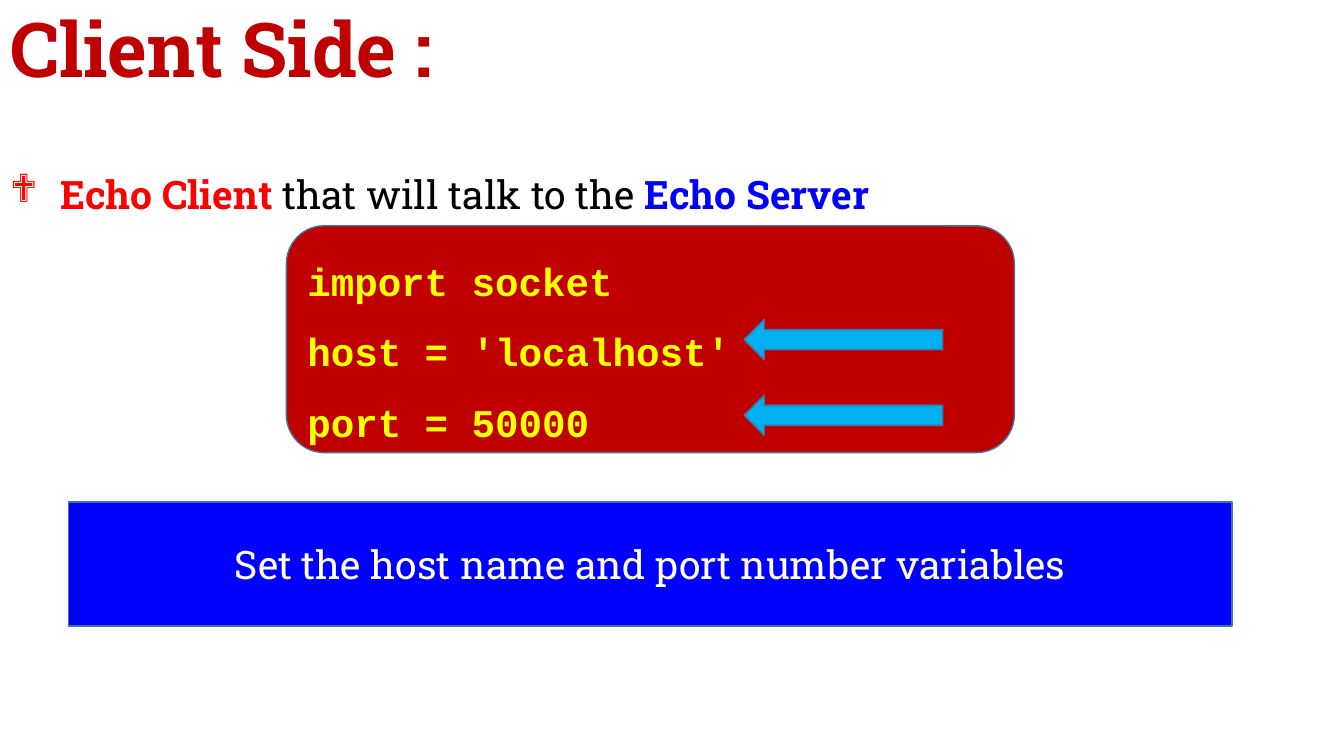
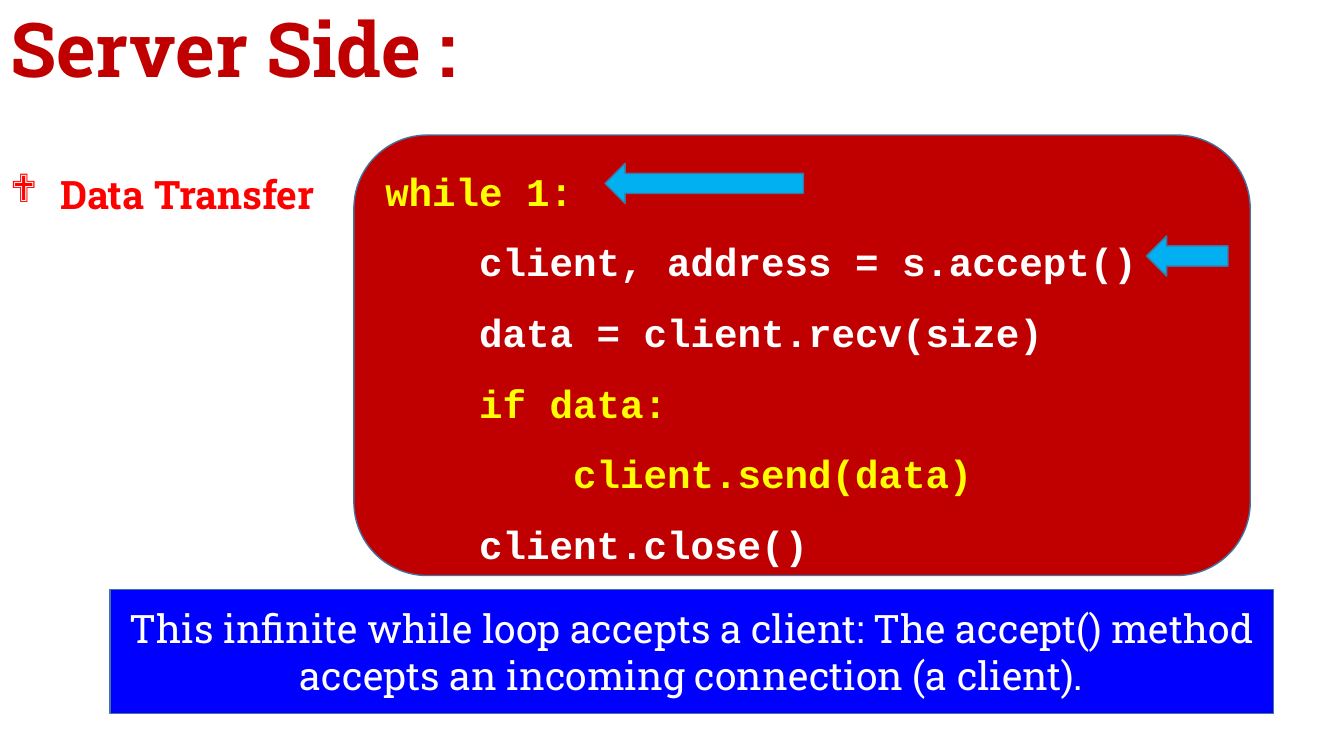
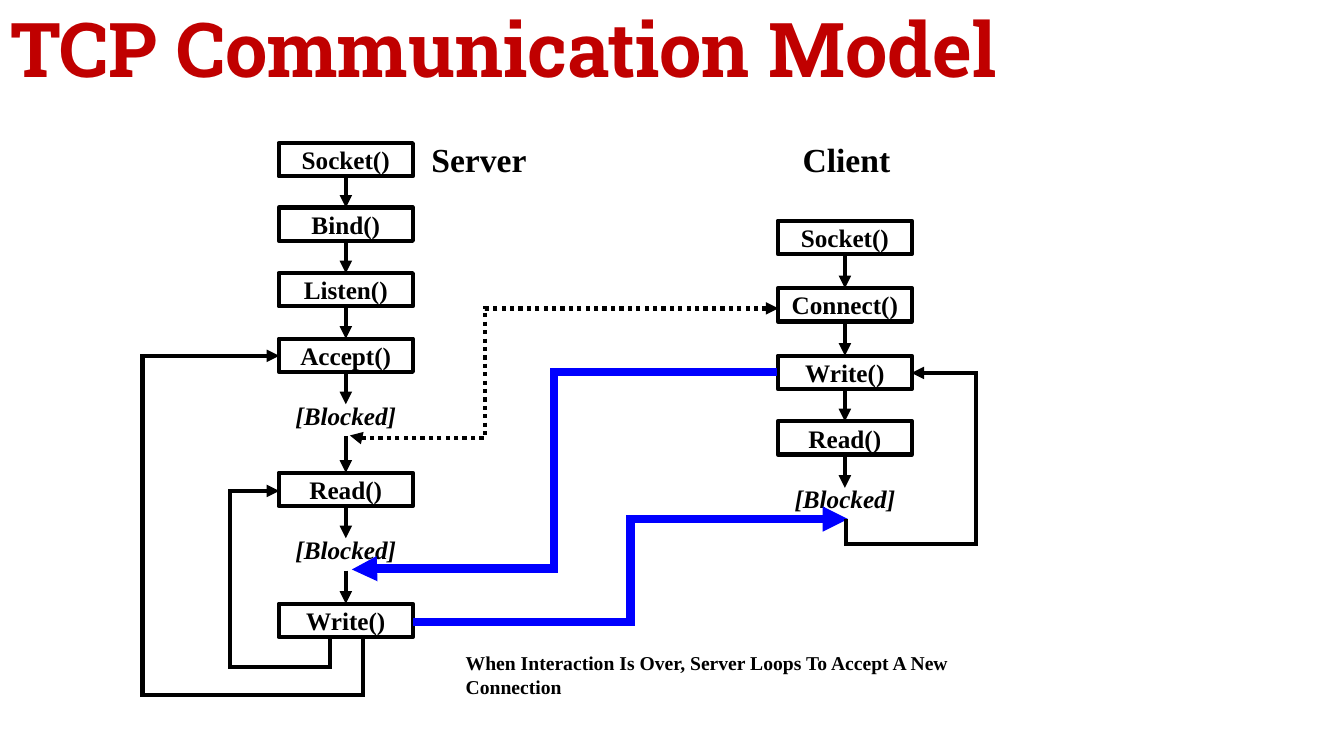
from dataclasses import dataclass
from itertools import pairwise
from typing import Sequence

from lxml.etree import SubElement
from pptx import Presentation
from pptx.dml.color import RGBColor
from pptx.enum.dml import MSO_LINE
from pptx.enum.shapes import MSO_CONNECTOR, MSO_SHAPE
from pptx.enum.text import MSO_ANCHOR, MSO_AUTO_SIZE, PP_ALIGN
from pptx.oxml.ns import qn
from pptx.util import Inches, Pt

SLAB, CODE, SERIF = "Roboto Slab", "Courier New", "Times New Roman"
DARK_RED, RED, BLUE, SKY = "C00000", "FF0000", "0000FF", "00B0F0"
YELLOW, WHITE, BLACK, OUTLINE = "FFFF00", "FFFFFF", "000000", "43739E"

BOX_WIDTH, BOX_HEIGHT = 1.33, 0.33
BLOCKED_WIDTH, BLOCKED_HEIGHT = 2.08, 0.4
BLOCKED_ENTRY, BLOCKED_EXIT = 0.09, 0.41
TOP_SIDE, BOTTOM_SIDE = 0, 2


@dataclass(frozen=True)
class Area:
    left: float
    top: float
    width: float
    height: float

    def lengths(self):
        return [Inches(n) for n in (self.left, self.top, self.width, self.height)]


@dataclass(frozen=True)
class Span:
    text: str
    color: str | None = None
    bold: bool | None = None


@dataclass(frozen=True)
class CodeSlide:
    title: str
    bullet: Sequence[Span]
    code_area: Area
    code: Sequence[Span]
    arrows: Sequence[Area]
    caption_area: Area
    caption: str


@dataclass(frozen=True)
class Step:
    label: str
    top: float
    blocked: bool = False


@dataclass(frozen=True)
class Elbow:
    frame: Area
    turn: int
    flips: str
    bends: Sequence[float]
    color: str = BLACK
    weight: float = 3
    dotted: bool = False
    both_ends: bool = False


CODE_SLIDES = (
    CodeSlide(
        "Client Side :",
        (
            Span("Echo Client ", RED, True),
            Span("that will talk to the "),
            Span("Echo Server", BLUE, True),
        ),
        Area(2.84, 2.24, 7.22, 2.25),
        (Span("import socket"), Span("host = 'localhost'"), Span("port = 50000")),
        (Area(7.38, 3.17, 1.97, 0.4), Area(7.38, 3.92, 1.97, 0.4)),
        Area(0.68, 4.98, 11.54, 1.23),
        "Set the host name and port number variables",
    ),
    CodeSlide(
        "Server Side :",
        (Span("Data Transfer", RED, True),),
        Area(3.51, 1.34, 8.89, 4.37),
        (
            Span("while 1:"),
            Span("    client, address = s.accept()", WHITE),
            Span("    data = client.recv(size)", WHITE),
            Span("    if data:"),
            Span("        client.send(data)"),
            Span("    client.close()", WHITE),
        ),
        (Area(6, 1.62, 1.97, 0.4), Area(11.37, 2.34, 0.81, 0.4)),
        Area(1.09, 5.85, 11.54, 1.23),
        "This infinite while loop accepts a client: The accept() method "
        "accepts an incoming connection (a client).",
    ),
)

SERVER_STEPS = (
    Step("Socket()", 1.42),
    Step("Bind()", 2.06),
    Step("Listen()", 2.71),
    Step("Accept()", 3.36),
    Step("[Blocked]", 3.92, True),
    Step("Read()", 4.69),
    Step("[Blocked]", 5.25, True),
    Step("Write()", 5.99),
)
CLIENT_STEPS = (
    Step("Socket()", 2.19),
    Step("Connect()", 2.86),
    Step("Write()", 3.53),
    Step("Read()", 4.18),
    Step("[Blocked]", 4.75, True),
)
ELBOWS = (
    Elbow(Area(3.47, 3.06, 4.25, 1.26), 180, "V", (0.684, 1.018),
          dotted=True, both_ends=True),
    Elbow(Area(3.49, 3.69, 4.22, 1.96), 180, "V", (0.525, 0.996), BLUE, 6),
    Elbow(Area(4.1, 5.15, 4.31, 1.02), 0, "V", (0.5,), BLUE, 6),
    Elbow(Area(2.29, 5.35, 1.46, 0.5), 90, "H", (-0.199, 1.976)),
    Elbow(Area(7.99, 4.1, 1.45, 0.65), 90, "HV", (-0.172, 1.979)),
    Elbow(Area(1.79, 4.51, 2.79, 0.83), 90, "H", (-0.207, 2.633)),
)


def rgb(value: str) -> RGBColor:
    return RGBColor.from_string(value)


def write(frame, lines: Sequence[Sequence[Span]], *, font: str, size: float,
          color: str, bold: bool = False, italic: bool = False,
          align=PP_ALIGN.LEFT, anchor=MSO_ANCHOR.TOP, spacing: float = 1.0,
          inset: float = 0.1, fit=MSO_AUTO_SIZE.NONE) -> None:
    frame.word_wrap = True
    frame.auto_size = fit
    frame.vertical_anchor = anchor
    frame.margin_left = frame.margin_right = Inches(inset)
    for index, line in enumerate(lines):
        para = frame.add_paragraph() if index else frame.paragraphs[0]
        para.alignment = align
        para.line_spacing = spacing
        para.space_before = Pt(0)
        for span in line:
            run = para.add_run()
            run.text = span.text
            run.font.name = font
            run.font.size = Pt(size)
            run.font.bold = bold if span.bold is None else span.bold
            run.font.italic = italic
            run.font.color.rgb = rgb(span.color or color)


def place(shape, area: Area) -> None:
    shape.left, shape.top, shape.width, shape.height = area.lengths()


def add_page(deck, layout_index: int, title: str):
    page = deck.slides.add_slide(deck.slide_layouts[layout_index])
    place(page.shapes.title, Area(0, 0, 12, 1.05))
    write(page.shapes.title.text_frame, [[Span(title)]], font=SLAB, size=54,
          color=DARK_RED, bold=True, anchor=MSO_ANCHOR.MIDDLE, spacing=0.9)
    return page


def add_bullet(page, spans: Sequence[Span]) -> None:
    body = page.placeholders[1]
    place(body, Area(0, 1.17, 13.33, 0.9))
    properties = body.text_frame.paragraphs[0]._p.get_or_add_pPr()
    properties.set("marL", str(Inches(0.5)))
    properties.set("indent", str(Inches(-0.5)))
    bullet_color = SubElement(properties, qn("a:buClr"))
    SubElement(bullet_color, qn("a:srgbClr"), val=RED)
    SubElement(properties, qn("a:buFont"), typeface="Wingdings")
    SubElement(properties, qn("a:buChar"), char="❖")
    write(body.text_frame, [spans], font=SLAB, size=28, color=BLACK,
          align=PP_ALIGN.JUSTIFY, spacing=2.0, fit=MSO_AUTO_SIZE.SHAPE_TO_FIT_TEXT)


def add_box(page, preset, area: Area, *, fill: str | None = None,
            line: str = OUTLINE, weight: float = 1):
    box = page.shapes.add_shape(preset, *area.lengths())
    box.shadow.inherit = False
    if fill:
        box.fill.solid()
        box.fill.fore_color.rgb = rgb(fill)
    else:
        box.fill.background()
    box.line.color.rgb = rgb(line)
    box.line.width = Pt(weight)
    return box


def add_label(page, area: Area, text: str, *, size: float,
              align=PP_ALIGN.CENTER, italic: bool = False) -> None:
    box = page.shapes.add_textbox(*area.lengths())
    write(box.text_frame, [[Span(text)]], font=SERIF, size=size, color=BLACK,
          bold=True, italic=italic, align=align)


def style_connector(connector, color: str = BLACK, weight: float = 3,
                    dotted: bool = False, both_ends: bool = False) -> None:
    connector.line.color.rgb = rgb(color)
    connector.line.width = Pt(weight)
    if dotted:
        connector.line.dash_style = MSO_LINE.ROUND_DOT
    properties = connector.element.spPr
    line = properties.find(qn("a:ln"))
    SubElement(line, qn("a:miter"), lim="800000")
    if both_ends:
        SubElement(line, qn("a:headEnd"), type="triangle")
    SubElement(line, qn("a:tailEnd"), type="triangle")
    SubElement(properties, qn("a:effectLst"))


def add_elbow(page, elbow: Elbow) -> None:
    left, top, width, height = elbow.frame.lengths()
    connector = page.shapes.add_connector(
        MSO_CONNECTOR.ELBOW, left, top, left + width, top + height)
    properties = connector.element.spPr
    transform = properties.find(qn("a:xfrm"))
    transform.set("rot", str(elbow.turn * 60000))
    for flip in elbow.flips:
        transform.set(f"flip{flip}", "1")
    geometry = properties.find(qn("a:prstGeom"))
    geometry.set("prst", f"bentConnector{len(elbow.bends) + 2}")
    guides = geometry.find(qn("a:avLst"))
    if guides is None:
        guides = SubElement(geometry, qn("a:avLst"))
    for number, bend in enumerate(elbow.bends, 1):
        SubElement(guides, qn("a:gd"), name=f"adj{number}",
                   fmla=f"val {round(bend * 100000)}")
    style_connector(connector, elbow.color, elbow.weight, elbow.dotted,
                    elbow.both_ends)


def add_step(page, step: Step, center: float):
    if step.blocked:
        area = Area(center - BLOCKED_WIDTH / 2, step.top, BLOCKED_WIDTH, BLOCKED_HEIGHT)
        add_label(page, area, step.label, size=18, italic=True)
        return None
    area = Area(center - BOX_WIDTH / 2, step.top, BOX_WIDTH, BOX_HEIGHT)
    box = add_box(page, MSO_SHAPE.RECTANGLE, area, line=BLACK, weight=3)
    write(box.text_frame, [[Span(step.label)]], font=SERIF, size=18, color=BLACK,
          bold=True, align=PP_ALIGN.CENTER, anchor=MSO_ANCHOR.MIDDLE, inset=0)
    return box


def add_column(page, steps: Sequence[Step], center: float) -> None:
    boxes = [add_step(page, step, center) for step in steps]
    for (step, box), (next_step, next_box) in pairwise(zip(steps, boxes)):
        start = step.top + (BLOCKED_EXIT if step.blocked else BOX_HEIGHT)
        end = next_step.top + (BLOCKED_ENTRY if next_step.blocked else 0)
        arrow = page.shapes.add_connector(
            MSO_CONNECTOR.STRAIGHT, Inches(center), Inches(start),
            Inches(center), Inches(end))
        if box is not None:
            arrow.begin_connect(box, BOTTOM_SIDE)
        if next_box is not None:
            arrow.end_connect(next_box, TOP_SIDE)
        style_connector(arrow)


def add_code_page(deck, content: CodeSlide) -> None:
    page = add_page(deck, 1, content.title)
    add_bullet(page, content.bullet)
    code = add_box(page, MSO_SHAPE.ROUNDED_RECTANGLE, content.code_area, fill=DARK_RED)
    write(code.text_frame, [[span] for span in content.code], font=CODE, size=28,
          color=YELLOW, bold=True, anchor=MSO_ANCHOR.MIDDLE, spacing=1.5)
    for area in content.arrows:
        add_box(page, MSO_SHAPE.LEFT_ARROW, area, fill=SKY)
    caption = add_box(page, MSO_SHAPE.RECTANGLE, content.caption_area, fill=BLUE)
    write(caption.text_frame, [[Span(content.caption)]], font=SLAB, size=28,
          color=WHITE, align=PP_ALIGN.CENTER, anchor=MSO_ANCHOR.MIDDLE)


def add_model_page(deck) -> None:
    page = add_page(deck, 5, "TCP Communication Model")
    add_column(page, SERVER_STEPS, 3.43)
    add_column(page, CLIENT_STEPS, 8.38)
    for elbow in ELBOWS:
        add_elbow(page, elbow)
    add_label(page, Area(4.18, 1.33, 2.25, 0.5), "Server", size=24, align=PP_ALIGN.LEFT)
    add_label(page, Area(7.27, 1.33, 2.25, 0.5), "Client", size=24)
    add_label(page, Area(4.52, 6.41, 5.45, 0.57),
              "When Interaction Is Over, Server Loops To Accept A New Connection",
              size=14, align=PP_ALIGN.LEFT)


def main() -> None:
    deck = Presentation()
    deck.slide_width, deck.slide_height = Inches(13.33), Inches(7.5)
    for content in CODE_SLIDES:
        add_code_page(deck, content)
    add_model_page(deck)
    deck.save("out.pptx")


if __name__ == "__main__":
    main()
